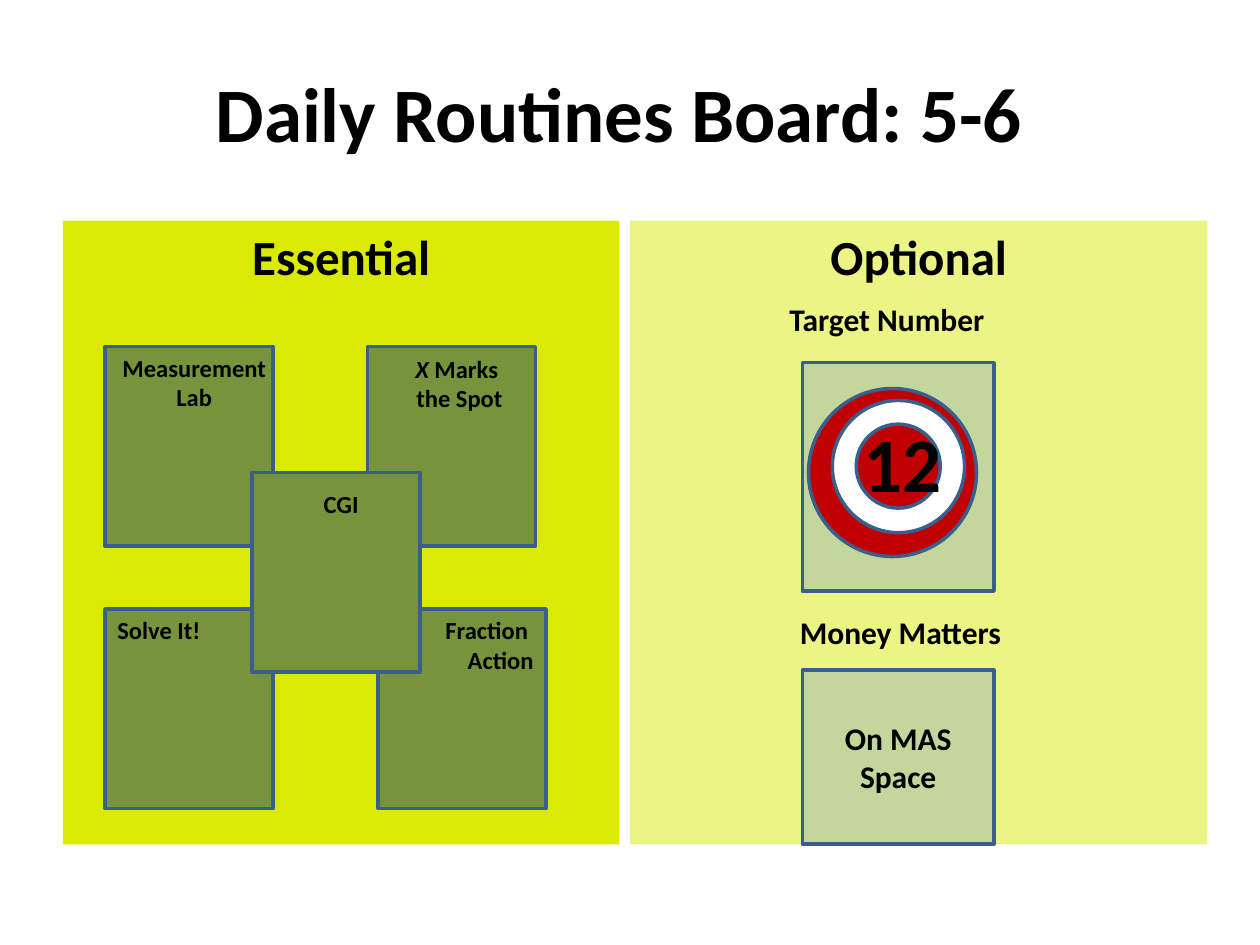
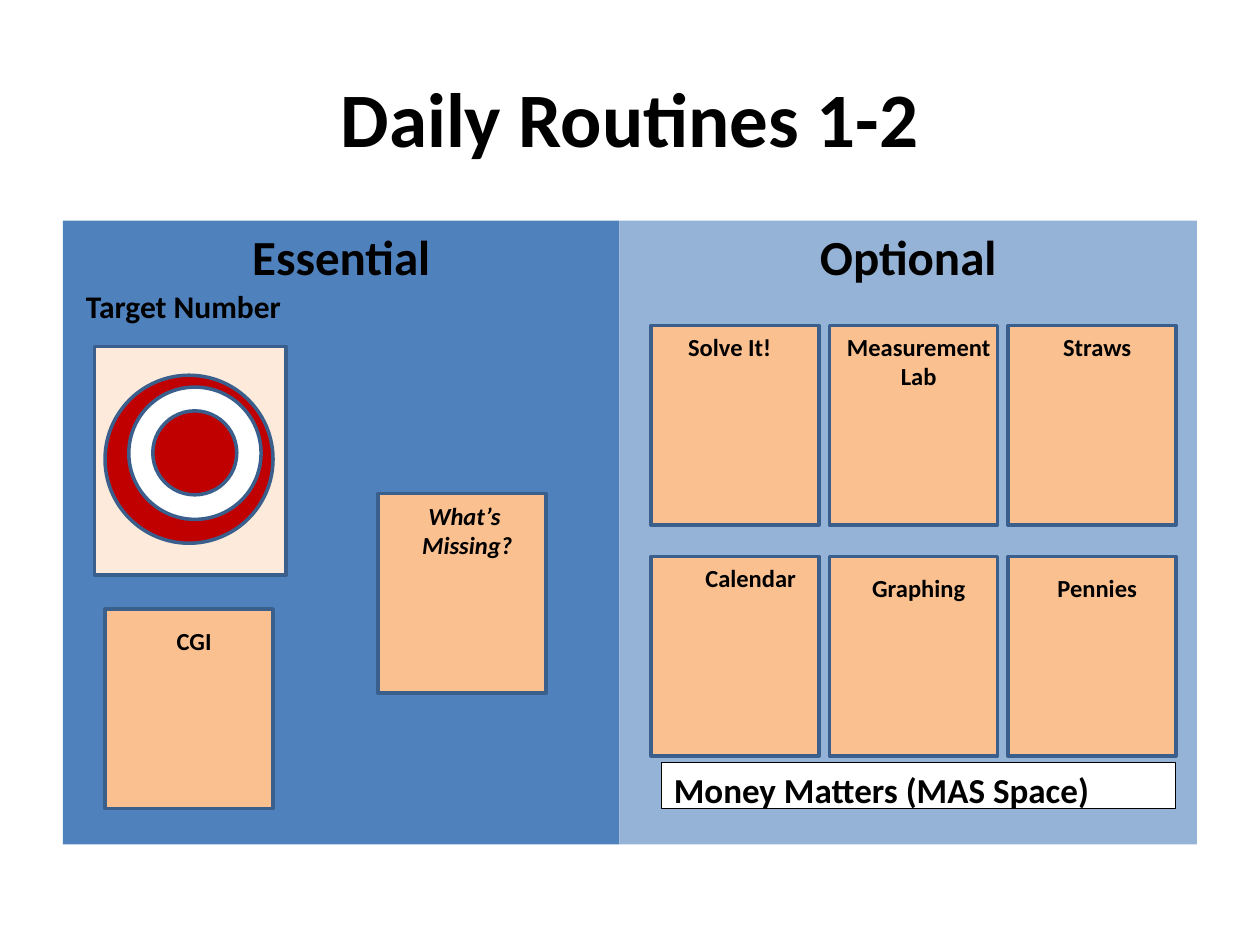
from dataclasses import dataclass

from lxml import etree
from pptx import Presentation
from pptx.dml.color import RGBColor
from pptx.enum.shapes import MSO_SHAPE
from pptx.enum.text import MSO_ANCHOR, MSO_AUTO_SIZE, PP_ALIGN
from pptx.oxml.ns import qn
from pptx.util import Pt

RECT, OVAL = MSO_SHAPE.RECTANGLE, MSO_SHAPE.OVAL
LEFT, CENTER, RIGHT = PP_ALIGN.LEFT, PP_ALIGN.CENTER, PP_ALIGN.RIGHT
TOP, MIDDLE = MSO_ANCHOR.TOP, MSO_ANCHOR.MIDDLE
GROW = MSO_AUTO_SIZE.SHAPE_TO_FIT_TEXT


@dataclass(frozen=True)
class Theme:
    font: str = "Calibri"
    ink: str = "000000"
    outline: str = "3A5F8C"
    red: str = "C00000"
    white: str = "FFFFFF"
    title: int = 44
    heading: int = 28
    bar: int = 20
    caption: int = 18
    label: int = 14


theme = Theme()


def draw(shapes, kind, box, fill, outline=None, weight=2, opacity=None):
    shape = shapes.add_shape(kind, *map(Pt, box))
    shape.shadow.inherit = False
    shape.fill.solid()
    shape.fill.fore_color.rgb = RGBColor.from_string(fill)
    if opacity:
        colour = next(shape._element.iter(qn("a:srgbClr")))
        etree.SubElement(colour, qn("a:alpha")).set("val", str(opacity * 1000))
    if outline:
        shape.line.color.rgb = RGBColor.from_string(outline)
        shape.line.width = Pt(weight)
    else:
        shape.line.fill.background()
    return shape


def write(shape, text, size, align=CENTER, anchor=TOP, auto_size=None):
    frame = shape.text_frame
    frame_format = {"word_wrap": True, "vertical_anchor": anchor, "auto_size": auto_size}
    for name, value in frame_format.items():
        setattr(frame, name, value)
    for index, line in enumerate(text.split("\n")):
        paragraph = frame.add_paragraph() if index else frame.paragraphs[0]
        paragraph.alignment = align
        for part, words in enumerate(line.split("*")):
            if not words:
                continue
            run = paragraph.add_run()
            run.text = words
            run_format = {"name": theme.font, "size": Pt(size), "bold": True, "italic": part % 2 == 1}
            for name, value in run_format.items():
                setattr(run.font, name, value)
            run.font.color.rgb = RGBColor.from_string(theme.ink)


PANEL_TOP, PANEL_HEIGHT = 126, 356.5
CARD_WIDTH, CARD_HEIGHT = 96, 114
FRAME_WIDTH, FRAME_HEIGHT = 109.5, 130.5
FULL, INSET, OVERHANG = (0, 0, 102), (12, 6, 78), (-24, 0.7, 150)
grid_x = [372 + 102 * column for column in range(3)]
grid_y = [186, 318]
rings = [(0, 0, 96, theme.red), (13.6, 6.8, 75.6, theme.white), (27.3, 20.4, 48, theme.red)]

boards = [
    {
        "title": ("Daily Routines Board: 5-6", 30, 18.7),
        "panels": [("Essential", 36, 318, "DAEA04", None), ("Optional", 360, 330, "DAEA04", 48)],
        "card_fill": "77933C",
        "frame_fill": "C3D69B",
        "cards": [
            ("Measurement Lab", 60, 198, FULL, CENTER),
            ("*X *Marks\n the Spot", 210, 198, OVERHANG, CENTER),
            ("Solve It!", 60, 348, (0, 0, 150), LEFT),
            ("Fraction \nAction", 216, 348, (-54, 0, 150), RIGHT),
            ("CGI", 144, 270, INSET, CENTER),
        ],
        "target_frame": (458.5, 207.3),
        "target": (462, 222),
        "captions": [("Target Number", 444, 168), ("Money Matters", 450, 346.5)],
    },
    {
        "title": ("Daily Routines 1-2", 36, 21.6),
        "panels": [("Essential", 36, 318, "4F81BD", None), ("Optional", 354, 330, "95B3D7", None)],
        "card_fill": "FAC090",
        "frame_fill": "FDEADA",
        "cards": [
            ("*What’s *\n*Missing?*", 216, 282, OVERHANG, CENTER),
            ("CGI", 60, 348, INSET, CENTER),
            ("Solve It!", grid_x[0], grid_y[0], (-30, 0, 150), CENTER),
            ("Measurement Lab", grid_x[1], grid_y[0], FULL, CENTER),
            ("Straws", grid_x[2], grid_y[0], FULL, CENTER),
            ("Calendar", grid_x[0], grid_y[1], (-18, 0, 150), CENTER),
            ("Graphing", grid_x[1], grid_y[1], INSET, CENTER),
            ("Pennies", grid_x[2], grid_y[1], INSET, CENTER),
        ],
        "target_frame": (54, 198),
        "target": (60, 214.4),
        "captions": [("Target Number", 42, 160.6)],
    },
]

deck = Presentation()
deck.slide_width, deck.slide_height = Pt(720), Pt(540)
board_shapes = []

for board in boards:
    shapes = deck.slides.add_slide(deck.slide_layouts[6]).shapes
    board_shapes.append(shapes)

    title, left, top = board["title"]
    write(shapes.add_textbox(Pt(left), Pt(top), Pt(648), Pt(90)), title, theme.title, anchor=MIDDLE)

    for heading, left, width, fill, opacity in board["panels"]:
        panel = draw(shapes, RECT, (left, PANEL_TOP, width, PANEL_HEIGHT), fill, opacity=opacity)
        write(panel, heading, theme.heading)

    for routine, left, top, (dx, dy, width), align in board["cards"]:
        draw(shapes, RECT, (left, top, CARD_WIDTH, CARD_HEIGHT), board["card_fill"], theme.outline)
        height = 41 if "\n" in routine or " Lab" in routine else 24.3
        label = shapes.add_textbox(Pt(left + dx), Pt(top + dy), Pt(width), Pt(height))
        write(label, routine, theme.label, align, auto_size=GROW)

    frame_box = (*board["target_frame"], FRAME_WIDTH, FRAME_HEIGHT)
    draw(shapes, RECT, frame_box, board["frame_fill"], theme.outline)
    target = shapes.add_group_shape()
    left, top = board["target"]
    for dx, dy, diameter, fill in rings:
        draw(target.shapes, OVAL, (left + dx, top + dy, diameter, diameter), fill, theme.outline)

    for caption, left, top in board["captions"]:
        caption_box = shapes.add_textbox(Pt(left), Pt(top), Pt(150), Pt(29))
        write(caption_box, caption, theme.caption, LEFT, auto_size=GROW)

upper_board, lower_board = board_shapes

target_number = upper_board.add_textbox(Pt(468), Pt(234), Pt(96), Pt(60.5))
write(target_number, "12", theme.title, auto_size=GROW)

money_space = draw(upper_board, RECT, (458.5, 383, FRAME_WIDTH, 99.5), "C3D69B", theme.outline)
write(money_space, "On MAS Space", theme.caption, anchor=MIDDLE)

money_bar = draw(lower_board, RECT, (378, 435.6, 294, 26.4), theme.white, theme.ink, 0.5)
write(money_bar, "Money Matters (MAS Space)", theme.bar, LEFT)

deck.save("out.pptx")
